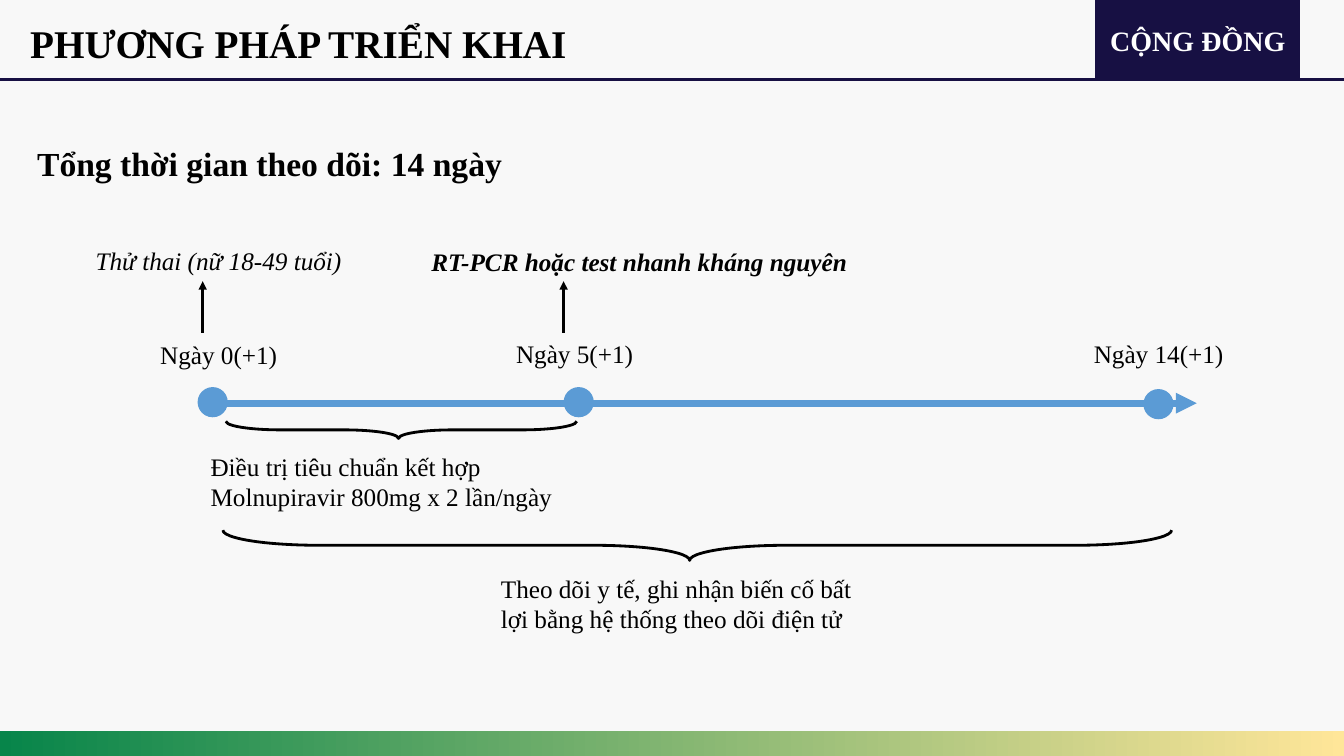
from lxml import etree
from pptx import Presentation
from pptx.dml.color import RGBColor
from pptx.enum.shapes import MSO_CONNECTOR, MSO_SHAPE
from pptx.enum.text import MSO_ANCHOR, MSO_AUTO_SIZE, PP_ALIGN
from pptx.oxml.ns import qn
from pptx.util import Inches, Pt

RECTANGLE = MSO_SHAPE.RECTANGLE
MILESTONE = MSO_SHAPE.FLOWCHART_CONNECTOR
BRACE = MSO_SHAPE.RIGHT_BRACE
STRAIGHT = MSO_CONNECTOR.STRAIGHT
TOP, MIDDLE = MSO_ANCHOR.TOP, MSO_ANCHOR.MIDDLE
GROW = MSO_AUTO_SIZE.SHAPE_TO_FIT_TEXT
LEFT, CENTER, JUSTIFY = PP_ALIGN.LEFT, PP_ALIGN.CENTER, PP_ALIGN.JUSTIFY

COLORS = {
    "paper": "F2F2F2",
    "navy": "171043",
    "blue": "5B9BD5",
    "black": "000000",
    "white": "FFFFFF",
    "yellow": "FFE699",
    "green": "07854A",
}


def rgb(name):
    return RGBColor.from_string(COLORS[name])


def write(frame, text, size=18, color="black", bold=False, italic=False,
          align=LEFT, anchor=TOP, spacing=None, before=None):
    frame.word_wrap = True
    frame.vertical_anchor = anchor
    frame.text = text
    for paragraph in frame.paragraphs:
        paragraph.alignment = align
        paragraph.line_spacing = spacing
        paragraph.space_before = before
        font = paragraph.runs[0].font
        font.name = "Times New Roman"
        font.size = Pt(size)
        font.bold, font.italic = bold, italic
        font.color.rgb = rgb(color)


class TimelineSlide:
    """Draws the parts of a study timeline on one slide in one style."""

    def __init__(self, deck):
        self.slide = deck.slides.add_slide(deck.slide_layouts[5])
        self.shapes = self.slide.shapes

    def title(self, text, left, top, width, height):
        heading = self.shapes.title
        self.shapes._spTree.append(heading._element)
        heading.left, heading.top = Inches(left), Inches(top)
        heading.width, heading.height = Inches(width), Inches(height)
        write(heading.text_frame, text, size=28, bold=True)
        heading.text_frame.auto_size = GROW

    def label(self, text, left, top, width, height=0.4, **style):
        box = self.shapes.add_textbox(
            Inches(left), Inches(top), Inches(width), Inches(height))
        write(box.text_frame, text, **style)
        box.text_frame.auto_size = GROW

    def shape(self, kind, left, top, width, height, fill=None, line=None, weight=1):
        item = self.shapes.add_shape(
            kind, Inches(left), Inches(top), Inches(width), Inches(height))
        item.shadow.inherit = False
        if fill:
            item.fill.solid()
            item.fill.fore_color.rgb = rgb(fill)
        else:
            item.fill.background()
        if line:
            item.line.color.rgb = rgb(line)
            item.line.width = Pt(weight)
        else:
            item.line.fill.background()
        return item

    def backdrop(self, width, height, color, opacity):
        sheet = self.shape(RECTANGLE, 0, 0, width, height, color)
        tint = sheet._element.spPr.find(qn("a:solidFill"))[0]
        etree.SubElement(tint, qn("a:alpha"), val=str(opacity * 1000))

    def gradient_strip(self, left, top, width, height, colors):
        strip = self.shape(RECTANGLE, left, top, width, height)
        strip.fill.gradient()
        strip.fill.gradient_angle = 180
        for stop, color in zip(strip.fill.gradient_stops, colors):
            stop.color.rgb = rgb(color)

    def brace(self, left, top, width, height):
        """Turn a right brace so that it opens upwards over the given box."""
        span = self.shape(BRACE, left + (width - height) / 2,
                          top + (height - width) / 2, height, width,
                          line="black", weight=2)
        span.rotation = 90
        span.adjustments[0] = 3.175
        span.adjustments[1] = 0.508

    def line(self, x1, y1, x2, y2, color, weight, arrow=False):
        rule = self.shapes.add_connector(
            STRAIGHT, Inches(x1), Inches(y1), Inches(x2), Inches(y2))
        rule.line.color.rgb = rgb(color)
        rule.line.width = Pt(weight)
        if arrow:
            etree.SubElement(rule.line._get_or_add_ln(), qn("a:tailEnd"), type="triangle")
        etree.SubElement(rule._element.spPr, qn("a:effectLst"))


def main():
    deck = Presentation()
    deck.slide_width, deck.slide_height = Inches(13.33), Inches(7.5)
    page = TimelineSlide(deck)

    page.backdrop(13.33, 7.38, "paper", 49)
    page.gradient_strip(0, 7.25, 13.33, 0.25, ("yellow", "green"))
    badge = page.shape(RECTANGLE, 10.87, 0, 2.02, 0.79, "navy", "navy")
    write(badge.text_frame, "CỘNG ĐỒNG", size=20, color="white", bold=True,
          align=CENTER, anchor=MIDDLE)
    page.line(0, 0.79, 13.33, 0.79, "navy", 2)
    page.title("PHƯƠNG PHÁP TRIỂN KHAI", 0.2, 0.14, 7.31, 0.57)
    page.label("Tổng thời gian theo dõi: 14 ngày", 0.27, 1.17, 12.74, 1.31,
               size=24, bold=True, align=JUSTIFY, spacing=1.5, before=Pt(6))

    page.line(2.01, 4, 11.87, 4, "blue", 5, arrow=True)
    milestones = [
        ("Ngày 0(+1)", 1.49, 3.32, 1.96, 3.84),
        ("Ngày 5(+1)", 5.02, 3.31, 5.59, 3.84),
        ("Ngày 14(+1)", 10.75, 3.31, 11.34, 3.86),
    ]
    for day, day_left, day_top, dot_left, dot_top in milestones:
        page.shape(MILESTONE, dot_left, dot_top, 0.3, 0.3, "blue")
        page.label(day, day_left, day_top, 1.73)

    page.label("Điều trị tiêu chuẩn kết hợp\nMolnupiravir 800mg x 2 lần/ngày",
               1.99, 4.43, 3.96, 0.71)
    page.label("Theo dõi y tế, ghi nhận biến cố bất lợi bằng hệ thống theo dõi điện tử",
               4.87, 5.64, 3.96, 0.71)
    page.label("Thử thai (nữ 18-49 tuổi)", 0.85, 2.38, 3.12, italic=True)
    page.label("RT-PCR hoặc test nhanh kháng nguyên", 4.18, 2.39, 5.36,
               bold=True, italic=True)

    page.brace(2.24, 4.18, 3.48, 0.17)
    page.brace(2.21, 5.26, 9.41, 0.3)
    for test_x in (2.01, 5.59):
        page.line(test_x, 3.3, test_x, 2.79, "black", 2, arrow=True)

    deck.save("out.pptx")


if __name__ == "__main__":
    main()
